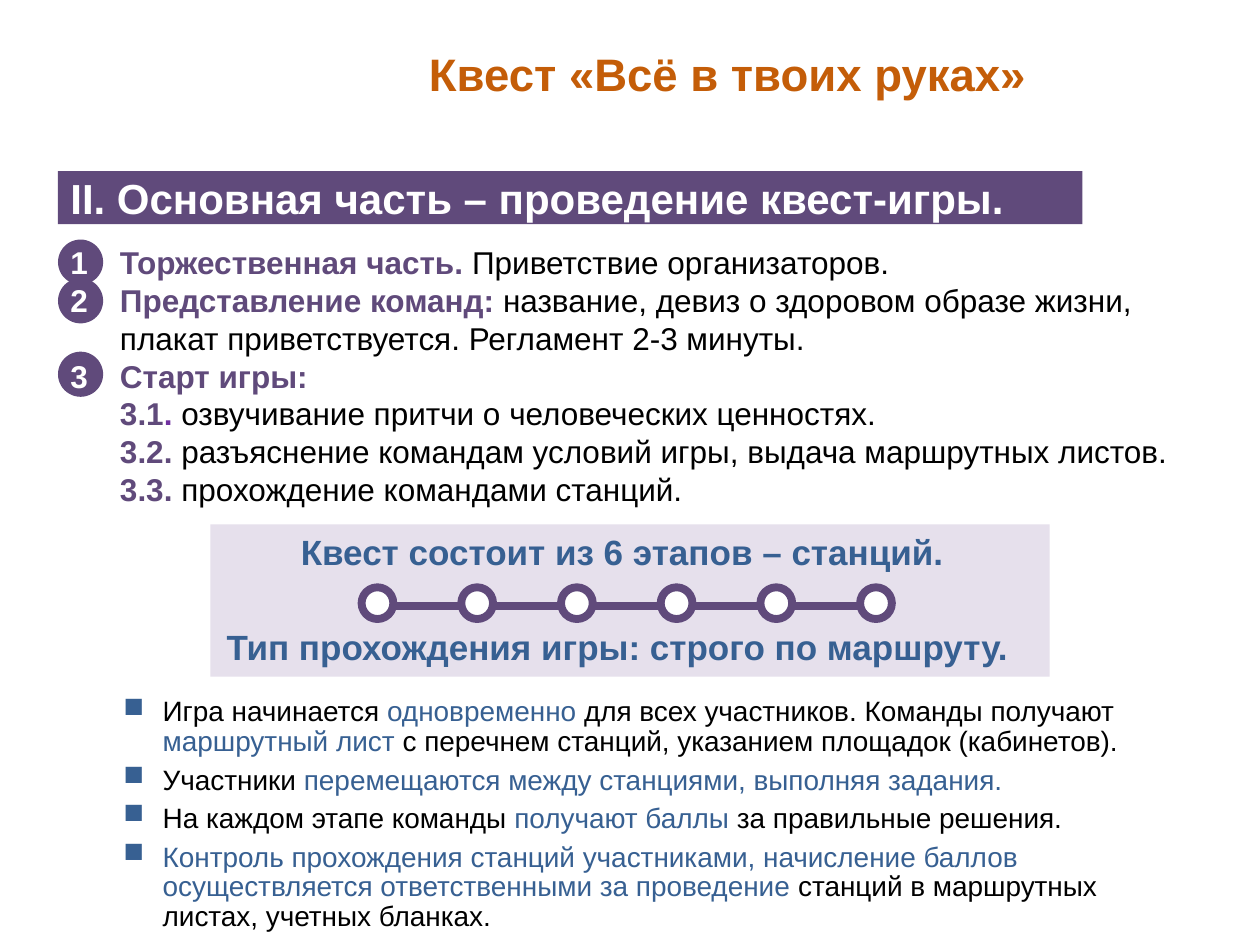
from lxml import etree
from pptx import Presentation
from pptx.dml.color import RGBColor
from pptx.enum.shapes import MSO_CONNECTOR, MSO_SHAPE
from pptx.enum.text import MSO_ANCHOR, PP_ALIGN
from pptx.oxml.ns import qn
from pptx.util import Cm, Pt

RECT, OVAL = MSO_SHAPE.RECTANGLE, MSO_SHAPE.OVAL
STRAIGHT = MSO_CONNECTOR.STRAIGHT
LEFT, CENTER = PP_ALIGN.LEFT, PP_ALIGN.CENTER
TOP, MIDDLE = MSO_ANCHOR.TOP, MSO_ANCHOR.MIDDLE

ORANGE = RGBColor(0xC4, 0x5D, 0x08)
PLUM = RGBColor(0x60, 0x4A, 0x7B)
VIOLET = RGBColor(0x70, 0x30, 0xA0)
LILAC = RGBColor(0xE6, 0xE0, 0xEC)
BLUE = RGBColor(0x37, 0x60, 0x92)
WHITE = RGBColor(0xFF, 0xFF, 0xFF)
BLACK = RGBColor(0, 0, 0)

# Each paragraph is a list of runs: text, colour, bold
STEPS = [
    [("1\t", WHITE, True), ("Торжественная часть. ", PLUM, True),
     ("Приветствие организаторов.", BLACK, False)],
    [("2\t", WHITE, True), ("Представление команд: ", PLUM, True),
     ("название, девиз о здоровом образе жизни, плакат приветствуется. "
      "Регламент 2-3 минуты.", BLACK, False)],
    [("3\t", WHITE, True), ("Старт игры:", PLUM, True)],
]
PARTS = [
    [("3.1", PLUM, True), (". ", VIOLET, True),
     ("озвучивание притчи о человеческих ценностях.", BLACK, False)],
    [("3.2. ", PLUM, True),
     ("разъяснение командам условий игры, выдача маршрутных листов.", BLACK, False)],
    [("3.3. ", PLUM, True), ("прохождение командами станций.", BLACK, False)],
]
RULES = [
    [("Игра начинается ", BLACK, False), ("одновременно ", BLUE, False),
     ("для всех участников. Команды получают ", BLACK, False),
     ("маршрутный лист ", BLUE, False),
     ("с перечнем станций, указанием площадок (кабинетов).", BLACK, False)],
    [("Участники ", BLACK, False),
     ("перемещаются между станциями, выполняя задания.", BLUE, False)],
    [("На каждом этапе команды ", BLACK, False), ("получают баллы ", BLUE, False),
     ("за правильные решения.", BLACK, False)],
    [("Контроль прохождения станций участниками, начисление баллов "
      "осуществляется ответственными за проведение ", BLUE, False),
     ("станций в маршрутных листах, учетных бланках.", BLACK, False)],
]


def add_bullet(para, color):
    props = para._p.get_or_add_pPr()
    tint = etree.SubElement(props, qn("a:buClr"))
    etree.SubElement(tint, qn("a:srgbClr"), val=str(color))
    etree.SubElement(props, qn("a:buChar"), char="■")


def write(shape, paras, size, align=LEFT, anchor=TOP, indents=None,
          before=0, leading=None, bullet=None):
    """Fill a shape with runs; indents holds (margin, first line) in cm per paragraph."""
    frame = shape.text_frame
    frame.word_wrap = True
    frame.vertical_anchor = anchor
    for i, runs in enumerate(paras):
        para = frame.add_paragraph() if i else frame.paragraphs[0]
        if bullet:
            add_bullet(para, bullet)
        para.alignment = align
        para.space_before = Pt(before if i else 0)
        if leading:
            para.line_spacing = Pt(leading)
        if indents:
            margin, first = indents[i]
            props = para._p.get_or_add_pPr()
            props.set("marL", str(Cm(margin)))
            props.set("indent", str(Cm(first)))
        for text, color, bold in runs:
            run = para.add_run()
            run.text = text
            font = run.font
            font.name, font.size, font.bold = "Arial", Pt(size), bold
            font.color.rgb = color


def add_box(slide, x, y, w, h, paras, size, **style):
    box = slide.shapes.add_textbox(Cm(x), Cm(y), Cm(w), Cm(h))
    write(box, paras, size, **style)


def add_form(shapes, kind, x, y, w, h, fill, line=None):
    form = shapes.add_shape(kind, Cm(x), Cm(y), Cm(w), Cm(h))
    form.shadow.inherit = False
    form.fill.solid()
    form.fill.fore_color.rgb = fill
    if line:
        form.line.color.rgb = line
        form.line.width = Pt(4.5)
    else:
        form.line.fill.background()
    return form


def add_route(slide, x, y, count, step, size):
    """Draw a row of station rings strung on one line."""
    shapes = slide.shapes.add_group_shape().shapes
    start, level = x + size / 2, y + 0.38
    track = shapes.add_connector(STRAIGHT, Cm(start), Cm(level),
                                 Cm(start + step * (count - 1)), Cm(level))
    track.line.color.rgb = PLUM
    track.line.width = Pt(4.5)
    etree.SubElement(track._element.spPr, qn("a:effectLst"))
    for i in range(count):
        add_form(shapes, OVAL, x + i * step, y, size, size, WHITE, PLUM)


def main():
    deck = Presentation()
    deck.slide_width, deck.slide_height = Cm(25.4), Cm(19.05)
    slide = deck.slides.add_slide(deck.slide_layouts[6])

    add_form(slide.shapes, RECT, 4.24, 10.57, 16.92, 3.07, LILAC)
    add_box(slide, 3.94, 0.81, 21.46, 1.37,
            [[("Квест «Всё в твоих руках»", ORANGE, True)]], 26, align=CENTER)

    band = add_form(slide.shapes, RECT, 1.17, 3.45, 20.65, 1.07, PLUM)
    write(band, [[("II. Основная часть – проведение квест-игры.", WHITE, True)]],
          24, anchor=MIDDLE)

    for y in (4.83, 5.61, 7.09):
        add_form(slide.shapes, OVAL, 1.17, y, 0.91, 0.91, PLUM)
    add_box(slide, 1.17, 4.78, 23.32, 5.64, STEPS + PARTS, 18,
            indents=[(1, -1)] * len(STEPS) + [(2.5, -1.5)] * len(PARTS))

    add_box(slide, 2.24, 13.94, 22, 5.03, RULES, 16,
            indents=[(0.79, -0.79)] * len(RULES), before=5, leading=17, bullet=BLUE)

    add_route(slide, 7.29, 11.84, count=6, step=2.01, size=0.64)
    add_box(slide, 1.7, 10.57, 21.69, 3.02,
            [[("Квест состоит из 6 этапов – станций.", BLUE, True)],
             [("Тип прохождения игры: строго по маршруту. ", BLUE, True)]],
            20, align=CENTER, before=30)

    deck.save("out.pptx")


if __name__ == "__main__":
    main()
